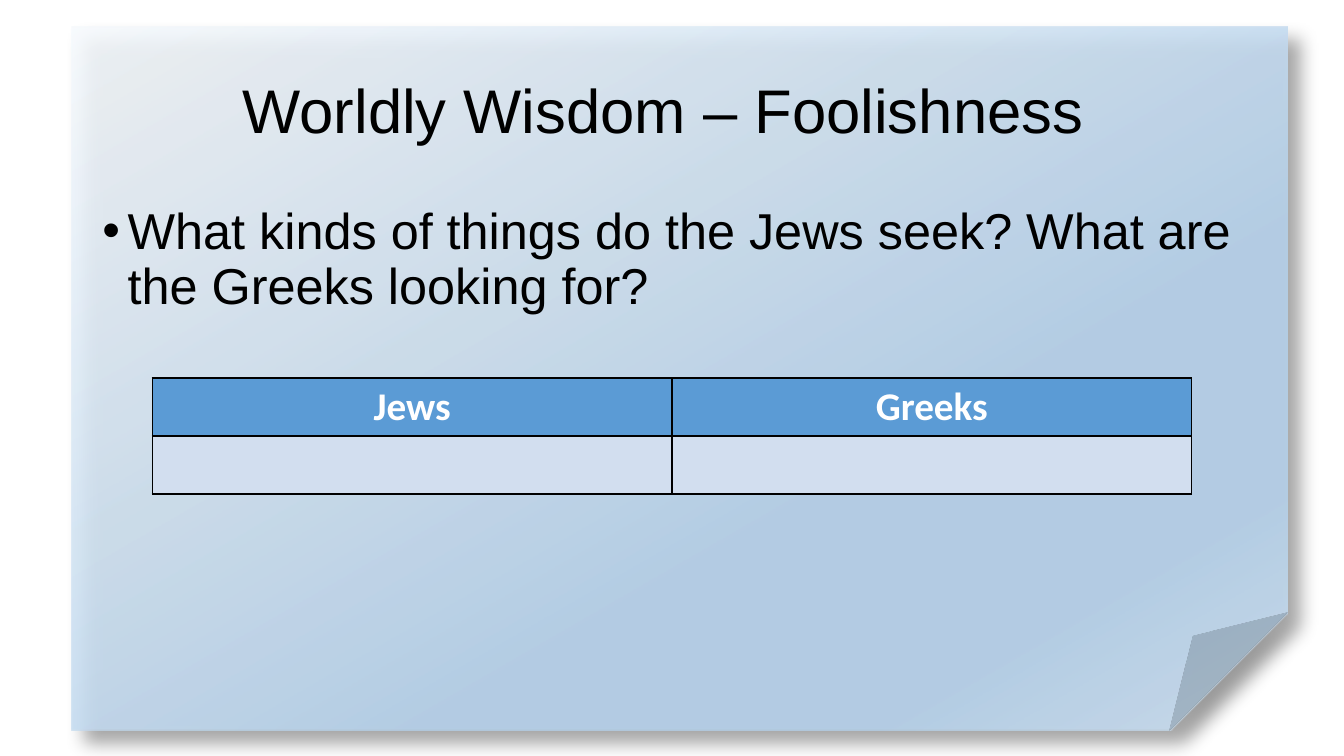
from dataclasses import dataclass
from pptx import Presentation
from pptx.dml.color import RGBColor as Color
from pptx.enum.shapes import MSO_SHAPE as Shape
from pptx.enum.text import MSO_ANCHOR as Anchor, MSO_AUTO_SIZE as AutoSize, PP_ALIGN as Align
from pptx.oxml import parse_xml
from pptx.oxml.ns import nsdecls
from pptx.util import Pt


@dataclass(frozen=True)
class Theme:
    text_font: str = "Arial"
    table_font: str = "Calibri"
    title_size: int = 44
    body_size: int = 36
    table_size: int = 28
    ink: str = "000000"
    header_ink: str = "FFFFFF"
    header_fill: str = "5B9BD5"
    row_fill: str = "D2DEEF"
    paper_stops: tuple = ((0, "F7FAFD"), (64, "B5D2EC"), (83, "B5D2EC"), (100, "CEE1F2"))
    paper_alpha: int = 87
    paper_angle: int = 60


class Page:
    def __init__(self, deck, theme):
        self.theme = theme
        self.slide = deck.slides.add_slide(deck.slide_layouts[1])

    def place(self, shape, box):
        shape.left, shape.top, shape.width, shape.height = map(Pt, box)

    def style(self, para, font, size, color, bold=False):
        for span in para.runs:
            span.font.name, span.font.size, span.font.bold = font, Pt(size), bold
            span.font.color.rgb = Color.from_string(color)

    def paper(self, box):
        theme = self.theme
        sheet = self.slide.shapes.add_shape(Shape.FOLDED_CORNER, *map(Pt, box))
        sheet.line.fill.background()
        sheet.shadow.inherit = False
        properties = sheet.element.spPr
        # Translucent gradient, placed right after the geometry
        stops = "".join(
            f'<a:gs pos="{position * 1000}"><a:srgbClr val="{color}">'
            f'<a:alpha val="{theme.paper_alpha * 1000}"/></a:srgbClr></a:gs>'
            for position, color in theme.paper_stops)
        properties.insert(2, parse_xml(
            f'<a:gradFill {nsdecls("a")} rotWithShape="1"><a:gsLst>{stops}</a:gsLst>'
            f'<a:lin ang="{theme.paper_angle * 60000}" scaled="0"/></a:gradFill>'))
        # Soft shadow to the lower right
        properties[-1].append(parse_xml(
            f'<a:outerShdw {nsdecls("a")} blurRad="{Pt(13)}" dist="{Pt(13)}" dir="2700000" '
            f'algn="tl" rotWithShape="0"><a:srgbClr val="{theme.ink}">'
            f'<a:alpha val="40000"/></a:srgbClr></a:outerShdw>'))
        # Send the sheet behind the placeholders
        self.slide.shapes.element.insert(2, sheet.element)

    def placeholder_text(self, shape, box, text, size, anchor, align):
        self.place(shape, box)
        frame = shape.text_frame
        frame.text = text
        frame.word_wrap, frame.auto_size = True, AutoSize.NONE
        frame.vertical_anchor = anchor
        para = frame.paragraphs[0]
        para.alignment, para.line_spacing, para.space_before = align, 0.9, Pt(0)
        self.style(para, self.theme.text_font, size, self.theme.ink)
        return para

    def title(self, box, text):
        self.placeholder_text(self.slide.shapes.title, box, text,
                              self.theme.title_size, Anchor.MIDDLE, Align.CENTER)

    def bullet(self, box, text):
        para = self.placeholder_text(self.slide.placeholders[1], box, text,
                                     self.theme.body_size, Anchor.TOP, Align.LEFT)
        properties = para._p.get_or_add_pPr()
        properties.set("marL", str(Pt(18)))
        properties.set("indent", str(-Pt(18)))
        properties.append(parse_xml(f'<a:buFont {nsdecls("a")} typeface="Arial"/>'))
        properties.append(parse_xml(f'<a:buChar {nsdecls("a")} char="•"/>'))

    def border(self, cell):
        properties = cell._tc.get_or_add_tcPr()
        for side in "LRTB":
            properties.append(parse_xml(
                f'<a:ln{side} {nsdecls("a")} w="{Pt(1)}"><a:solidFill>'
                f'<a:srgbClr val="{self.theme.ink}"/></a:solidFill></a:ln{side}>'))

    def table(self, box, rows):
        theme = self.theme
        grid = self.slide.shapes.add_table(len(rows), len(rows[0]), *map(Pt, box)).table
        for row_index, row in enumerate(rows):
            for column_index, text in enumerate(row):
                cell = grid.cell(row_index, column_index)
                self.border(cell)
                cell.fill.solid()
                cell.fill.fore_color.rgb = Color.from_string(
                    theme.row_fill if row_index else theme.header_fill)
                cell.text_frame.text = text
                para = cell.text_frame.paragraphs[0]
                para.alignment = Align.CENTER
                self.style(para, theme.table_font, theme.table_size, theme.header_ink, bold=True)


def main():
    deck = Presentation()
    deck.slide_width, deck.slide_height = Pt(960), Pt(540)
    page = Page(deck, Theme())

    # Background sheet
    page.paper((51.5, 19.2, 867.8, 502.2))

    # Heading and question
    page.title((66, 28.75, 828, 104.4), "Worldly Wisdom – Foolishness ")
    page.bullet((66, 143.75, 828, 342.6),
                "What kinds of things do the Jews seek? What are the Greeks looking for?")

    # Answer table
    page.table((108.8, 270, 742.4, 82.8), [("Jews", "Greeks"), ("", "")])

    deck.save("out.pptx")


if __name__ == "__main__":
    main()
